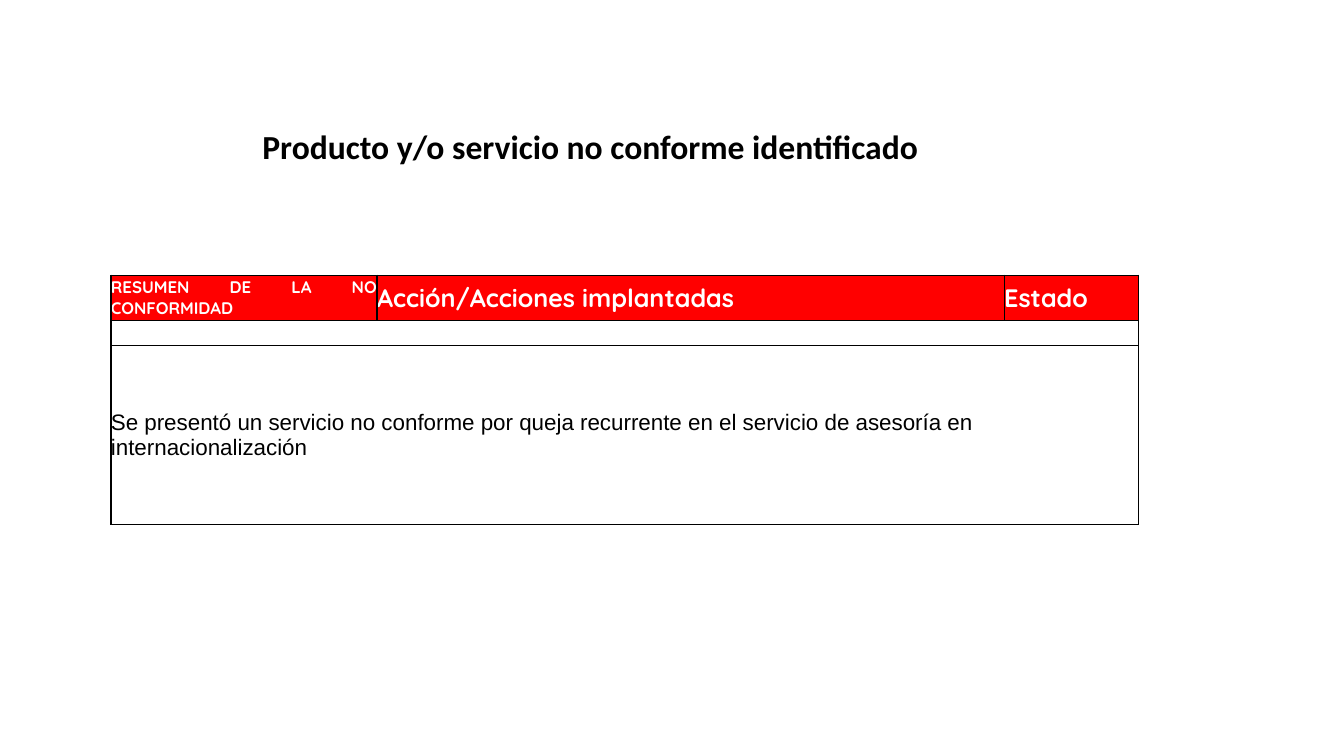
from lxml.etree import SubElement
from pptx import Presentation
from pptx.dml.color import RGBColor
from pptx.enum.text import MSO_ANCHOR as Anchor, PP_ALIGN as Align
from pptx.oxml.ns import qn
from pptx.util import Inches, Pt


def paint(target, color):
    target.solid()
    target.fore_color.rgb = RGBColor.from_string(color)


def write(para, text, size, face, color, bold, align):
    para.text = text
    para.alignment = align
    font = para.font
    font.size = Pt(size)
    font.name = face
    font.bold = bold
    paint(font.fill, color)


deck = Presentation()
deck.slide_width = Inches(13.33)
deck.slide_height = Inches(7.5)
slide = deck.slides.add_slide(deck.slide_layouts[5])

title = slide.shapes.title
title.left, title.top = Inches(0.5), Inches(0.45)
title.width, title.height = Inches(10.71), Inches(1.25)
frame = title.text_frame
frame.vertical_anchor = Anchor.BOTTOM
frame.word_wrap = True
head = frame.paragraphs[0]
write(head, "Producto y/o servicio no conforme identificado",
      24, "Calibri", "000000", True, Align.CENTER)
head.line_spacing = 0.9

cols = [2.64, 6.22, 1.33]
rows = [0.45, 0.25, 1.77]
table = slide.shapes.add_table(
    len(rows), len(cols), Inches(1.1), Inches(2.73),
    Inches(sum(cols)), Inches(sum(rows))).table
table.first_row = table.horz_banding = False
for col, width in zip(table.columns, cols):
    col.width = Inches(width)
for row, height in zip(table.rows, rows):
    row.height = Inches(height)

for cell in table.iter_cells():
    cell.margin_left = cell.margin_right = 0
    cell.margin_top = cell.margin_bottom = 0
    cell.vertical_anchor = Anchor.MIDDLE
    cell.text_frame.paragraphs[0].font.size = Pt(12)
    props = cell._tc.get_or_add_tcPr()
    for side in ("lnL", "lnR", "lnT", "lnB"):
        line = SubElement(props, qn(f"a:{side}"), w=str(Pt(1)))
        solid = SubElement(line, qn("a:solidFill"))
        SubElement(solid, qn("a:srgbClr"), val="000000")
    cell.fill.background()

for r in (1, 2):
    table.cell(r, 0).merge(table.cell(r, len(cols) - 1))

heads = [("RESUMEN DE LA NO CONFORMIDAD", 12),
         ("Acción/Acciones implantadas", 18), ("Estado", 18)]
for c, (text, size) in enumerate(heads):
    cell = table.cell(0, c)
    paint(cell.fill, "FF0000")
    write(cell.text_frame.paragraphs[0], text, size,
          "Quicksand", "FFFFFF", True, Align.JUSTIFY)

write(table.cell(2, 0).text_frame.paragraphs[0],
      "Se presentó un servicio no conforme por queja recurrente "
      "en el servicio de asesoría en internacionalización",
      16, "Arial", "000000", False, Align.LEFT)

deck.save("out.pptx")
